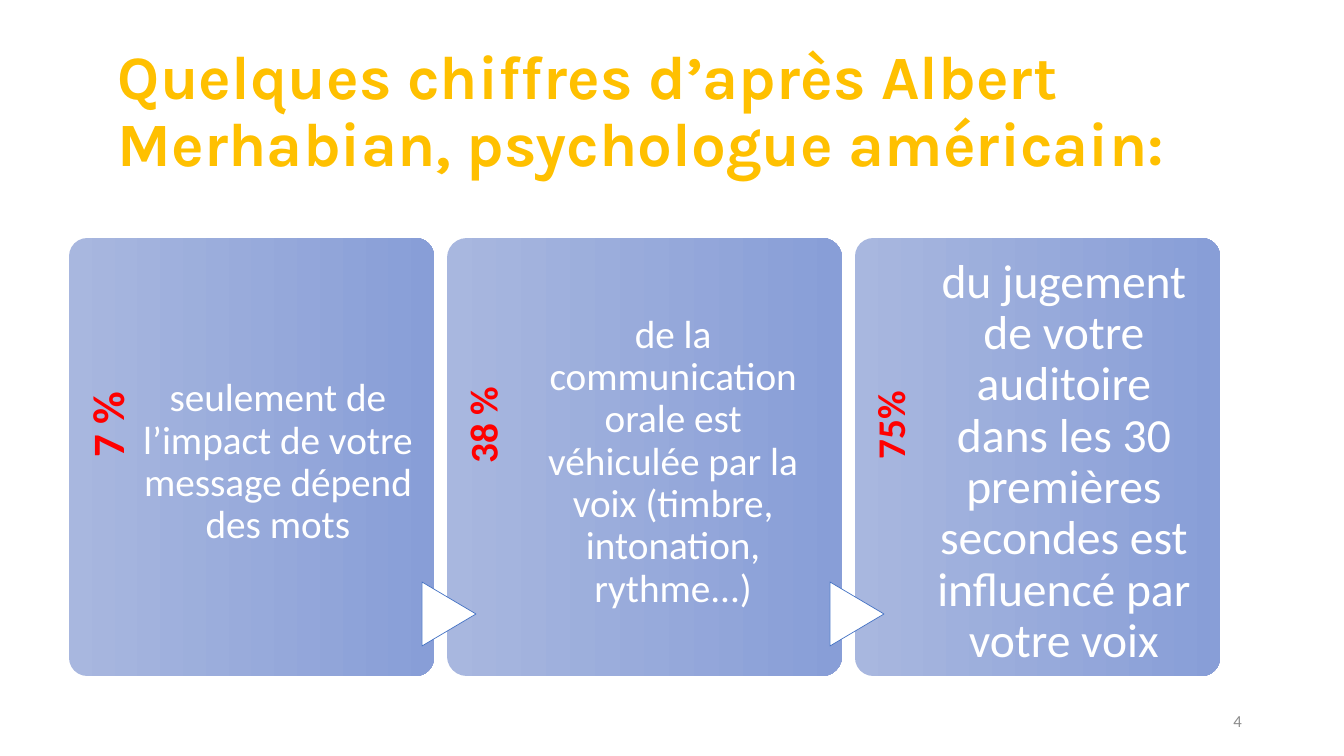
import pptx
import pptx.util
import pptx.dml.color
import pptx.enum.shapes
import pptx.enum.text

COLORS = {"gold": "FFC000", "red": "FF0000", "white": "FFFFFF", "gray": "8C8C8C",
          "blue": "4472C4", "card_start": "A8B7DF", "card_end": "889ED7"}
TITLE = "Quelques chiffres d’après Albert Merhabian, psychologue américain:"
PAGE_NUMBER = "4"
CARDS = [
    {"width": 365, "figure": "7 %", "figure_size": 32, "body_size": 28,
     "body": "seulement de l’impact de votre message dépend des mots"},
    {"width": 395, "figure": "38 %", "figure_size": 28, "body_size": 28,
     "body": "de la communication orale est véhiculée par la voix (timbre, intonation, rythme...)"},
    {"width": 365, "figure": "75%", "figure_size": 28, "body_size": 34,
     "body": "du jugement de votre auditoire dans les 30 premières secondes est influencé par votre voix"},
]
CARD_LEFT, CARD_TOP, CARD_HEIGHT, CARD_GAP = 69, 238, 438, 13
ARROW_WIDTH, ARROW_HEIGHT, ARROW_MIDDLE = 64, 54, 614

SHAPES = pptx.enum.shapes.MSO_SHAPE
ALIGN = pptx.enum.text.PP_ALIGN
ANCHOR = pptx.enum.text.MSO_ANCHOR


def px(value):
    return pptx.util.Emu(round(value * 914400 / 100.8))


def rgb(name):
    return pptx.dml.color.RGBColor.from_string(COLORS[name])


def apply(target, values):
    for name, value in values.items():
        setattr(target, name, value)


def write(shape, text, size, color, align, anchor, insets, font="Calibri", bold=False, spacing=0.9):
    frame = shape.text_frame
    left, top, right, bottom = map(px, insets)
    apply(frame, {"word_wrap": True, "vertical_anchor": anchor, "margin_left": left,
                  "margin_top": top, "margin_right": right, "margin_bottom": bottom})
    para = frame.paragraphs[0]
    apply(para, {"alignment": align, "line_spacing": spacing})
    span = para.add_run()
    span.text = text
    apply(span.font, {"name": font, "size": pptx.util.Pt(size), "bold": bold})
    span.font.color.rgb = rgb(color)


def add_turned(page, kind, center_x, center_y, width, height, rotation):
    shape = page.shapes.add_shape(kind, px(center_x - width / 2), px(center_y - height / 2),
                                  px(width), px(height))
    shape.rotation = rotation
    shape.shadow.inherit = False
    return shape


def add_card(page, left, card):
    width = card["width"]
    panel = add_turned(page, SHAPES.ROUNDED_RECTANGLE, left + width / 2,
                       CARD_TOP + CARD_HEIGHT / 2, CARD_HEIGHT, width, 270)
    panel.adjustments[0] = 0.05
    panel.fill.gradient()
    panel.fill.gradient_angle = 270
    for stop, color in zip(panel.fill.gradient_stops, ("card_start", "card_end")):
        stop.color.rgb = rgb(color)
    panel.line.fill.background()
    write(panel, card["figure"], card["figure_size"], "red", ALIGN.CENTER, ANCHOR.TOP,
          (79, 11, 15, 0.8 * width), bold=True)
    box = page.shapes.add_textbox(px(left + 0.2 * width), px(CARD_TOP),
                                  px(0.745 * width), px(CARD_HEIGHT))
    write(box, card["body"], card["body_size"], "white", ALIGN.CENTER, ANCHOR.MIDDLE, (0, 11, 0, 0))


def add_arrow(page, center_x):
    arrow = add_turned(page, SHAPES.FLOWCHART_EXTRACT, center_x, ARROW_MIDDLE,
                       ARROW_WIDTH, ARROW_HEIGHT, 90)
    arrow.fill.solid()
    arrow.fill.fore_color.rgb = rgb("white")
    arrow.line.color.rgb = rgb("blue")
    arrow.line.width = pptx.util.Pt(0.5)


def main():
    deck = pptx.Presentation()
    apply(deck, {"slide_width": px(1344), "slide_height": px(756)})
    page = deck.slides.add_slide(deck.slide_layouts[6])

    title = page.shapes.add_textbox(px(93), px(40), px(1159), px(146))
    write(title, TITLE, 44, "gold", ALIGN.LEFT, ANCHOR.MIDDLE, (25, 5, 10, 5), font="Karla", bold=True)

    lefts = [CARD_LEFT + sum(card["width"] + CARD_GAP for card in CARDS[:index])
             for index in range(len(CARDS))]
    for left, card in zip(lefts, CARDS):
        add_card(page, left, card)
    for left in lefts[1:]:
        add_arrow(page, left + 2)

    number = page.shapes.add_textbox(px(950), px(701), px(302), px(40))
    write(number, PAGE_NUMBER, 12, "gray", ALIGN.RIGHT, ANCHOR.MIDDLE, (10, 5, 10, 5), spacing=1.0)
    deck.save("out.pptx")


if __name__ == "__main__":
    main()
